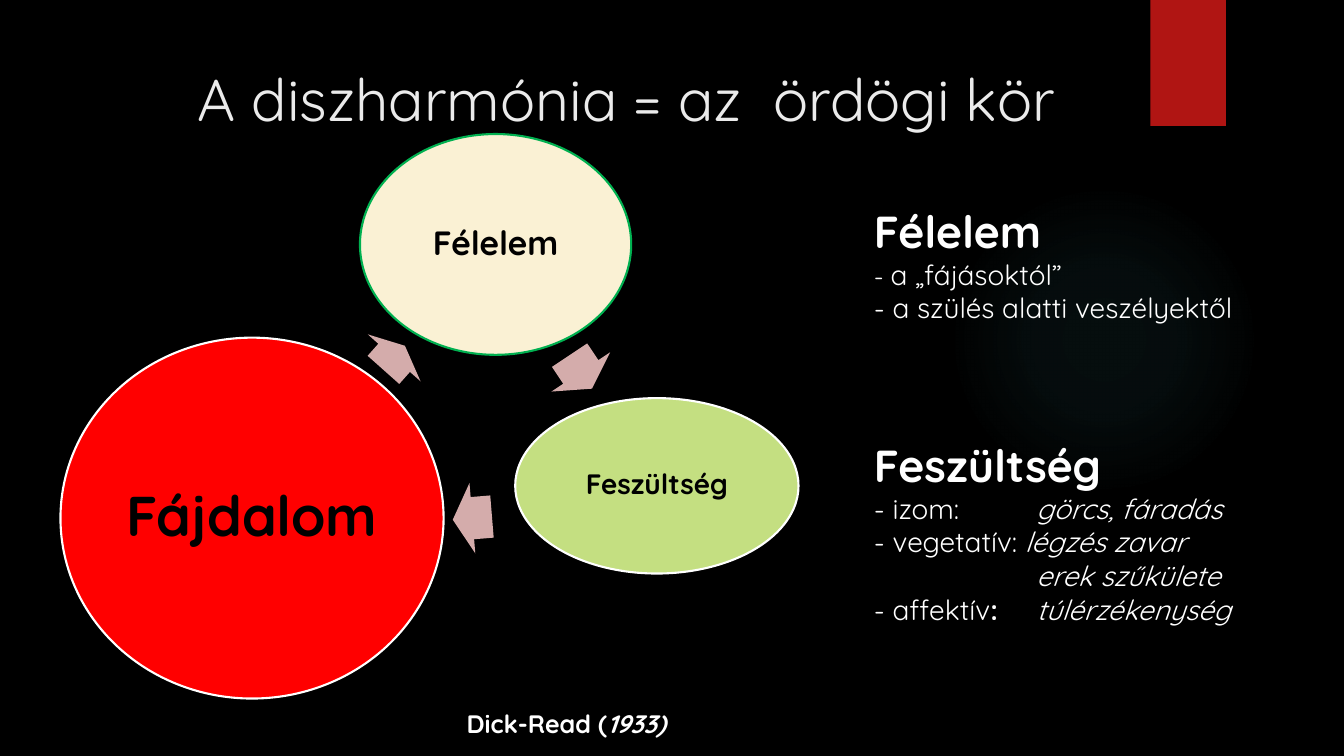
from lxml.etree import SubElement
from pptx import Presentation
from pptx.dml.color import RGBColor
from pptx.enum.shapes import MSO_SHAPE
from pptx.enum.text import MSO_ANCHOR, MSO_AUTO_SIZE, PP_ALIGN
from pptx.oxml.ns import qn
from pptx.util import Pt

PX = 9144
COLORS = {
    "background": "000000", "ribbon": "B01513", "glow": "50B9C1",
    "title": "EBEBEB", "white": "FFFFFF", "black": "000000",
    "fear": "FAF1D4", "fear line": "00B050", "tension": "C4DF81",
    "pain": "FF0000", "arrow": "D4ACAB",
}
COLORS = {name: RGBColor.from_string(value) for name, value in COLORS.items()}

presentation = Presentation()
presentation.slide_width = 1333 * PX
presentation.slide_height = 750 * PX
slide = presentation.slides.add_slide(presentation.slide_layouts[5])
slide.background.fill.solid()
slide.background.fill.fore_color.rgb = COLORS["background"]


def add_plain_shape(kind, box, fill, line=None):
    shape = slide.shapes.add_shape(kind, *[value * PX for value in box])
    shape.shadow.inherit = False
    shape.fill.solid()
    shape.fill.fore_color.rgb = COLORS[fill]
    if line:
        shape.line.color.rgb = COLORS[line]
        shape.line.width = Pt(1.5)
    else:
        shape.line.fill.background()
    return shape


def add_run(paragraph, text, color, size, **styles):
    run = paragraph.add_run()
    run.text = text
    run.font.color.rgb = COLORS[color]
    for name, value in {"name": "Quicksand", "size": Pt(size), "bold": False, **styles}.items():
        setattr(run.font, name, value)


glow = add_plain_shape(MSO_SHAPE.OVAL, (941, 183, 308, 308), "glow")
glow.fill.gradient()
gradient = glow.fill._xPr.find(qn("a:gradFill"))
for child in list(gradient):
    gradient.remove(child)
stops = SubElement(gradient, qn("a:gsLst"))
for position, opacity in ((0, 7), (36, 6), (69, 0)):
    stop = SubElement(stops, qn("a:gs"), pos=str(position * 1000))
    color = SubElement(stop, qn("a:srgbClr"), val=str(COLORS["glow"]))
    SubElement(color, qn("a:alpha"), val=str(opacity * 1000))
center = SubElement(gradient, qn("a:path"), path="circle")
SubElement(center, qn("a:fillToRect"), l="50000", t="50000", r="50000", b="50000")

add_plain_shape(MSO_SHAPE.RECTANGLE, (1141, 0, 75, 125), "ribbon")

title = slide.shapes.title
for name, value in zip(("left", "top", "width", "height"), (186, 57, 975, 140)):
    setattr(title, name, value * PX)
title_format = {"vertical_anchor": MSO_ANCHOR.TOP, "auto_size": MSO_AUTO_SIZE.NONE, "word_wrap": True}
for name, value in title_format.items():
    setattr(title.text_frame, name, value)
title_paragraph = title.text_frame.paragraphs[0]
title_paragraph.alignment = PP_ALIGN.LEFT
add_run(title_paragraph, "A diszharmónia = az  ördögi kör", "title", 42)

stages = (
    ("Félelem", (357, 133, 269, 219), "fear", "fear line", 24),
    ("Feszültség", (511, 395, 281, 174), "tension", "white", 20),
    ("Fájdalom", (60, 335, 380, 358), "pain", "white", 40),
)
for text, box, fill, line, size in stages:
    stage = add_plain_shape(MSO_SHAPE.OVAL, box, fill, line)
    stage.text_frame.word_wrap = False
    stage.text_frame.vertical_anchor = MSO_ANCHOR.MIDDLE
    paragraph = stage.text_frame.paragraphs[0]
    paragraph.alignment = PP_ALIGN.CENTER
    paragraph.line_spacing = 0.9
    add_run(paragraph, text, "black", size, bold=True)

arrows = (((556, 334, 40, 70), 56.2), ((449, 479, 39, 70), 175.3), ((375, 320, 32, 70), 311.7))
for box, rotation in arrows:
    arrow = add_plain_shape(MSO_SHAPE.RIGHT_ARROW, box, "arrow")
    arrow.rotation = rotation
    arrow.adjustments[0] = 0.6
    arrow.adjustments[1] = 0.5

heading = {"bold": True}
italic = {"italic": True}
notes = (
    ((857, 197, 384, 162), (
        (("Félelem", 32, heading),),
        (("- ", 18, {}), ("a „fájásoktól”", 20, {})),
        (("- a szülés alatti veszélyektől", 20, {}),),
    )),
    ((857, 429, 430, 199), (
        (("Feszültség", 32, heading),),
        (("- izom:\t", 20, {}), ("görcs, fáradás", 20, italic)),
        (("- vegetatív: ", 20, {}), ("légzés zavar", 20, italic)),
        (("\terek szűkülete", 20, italic),),
        (("- affektív", 20, {}), (":", 20, heading), ("\t", 20, {}), ("túlérzékenység", 20, italic)),
    )),
    ((453, 698, 300, 45), (
        (("Dick-Read (", 18, heading), ("1933)", 18, {"bold": True, "italic": True})),
    )),
)
for box, lines in notes:
    text_frame = slide.shapes.add_textbox(*[value * PX for value in box]).text_frame
    text_frame.word_wrap = True
    for index, runs in enumerate(lines):
        paragraph = text_frame.add_paragraph() if index else text_frame.paragraphs[0]
        if any("\t" in text for text, size, styles in runs):
            tabs = SubElement(paragraph._p.get_or_add_pPr(), qn("a:tabLst"))
            SubElement(tabs, qn("a:tab"), pos=str(161 * PX), algn="l")
        for text, size, styles in runs:
            add_run(paragraph, text, "white", size, **styles)

presentation.save("out.pptx")
